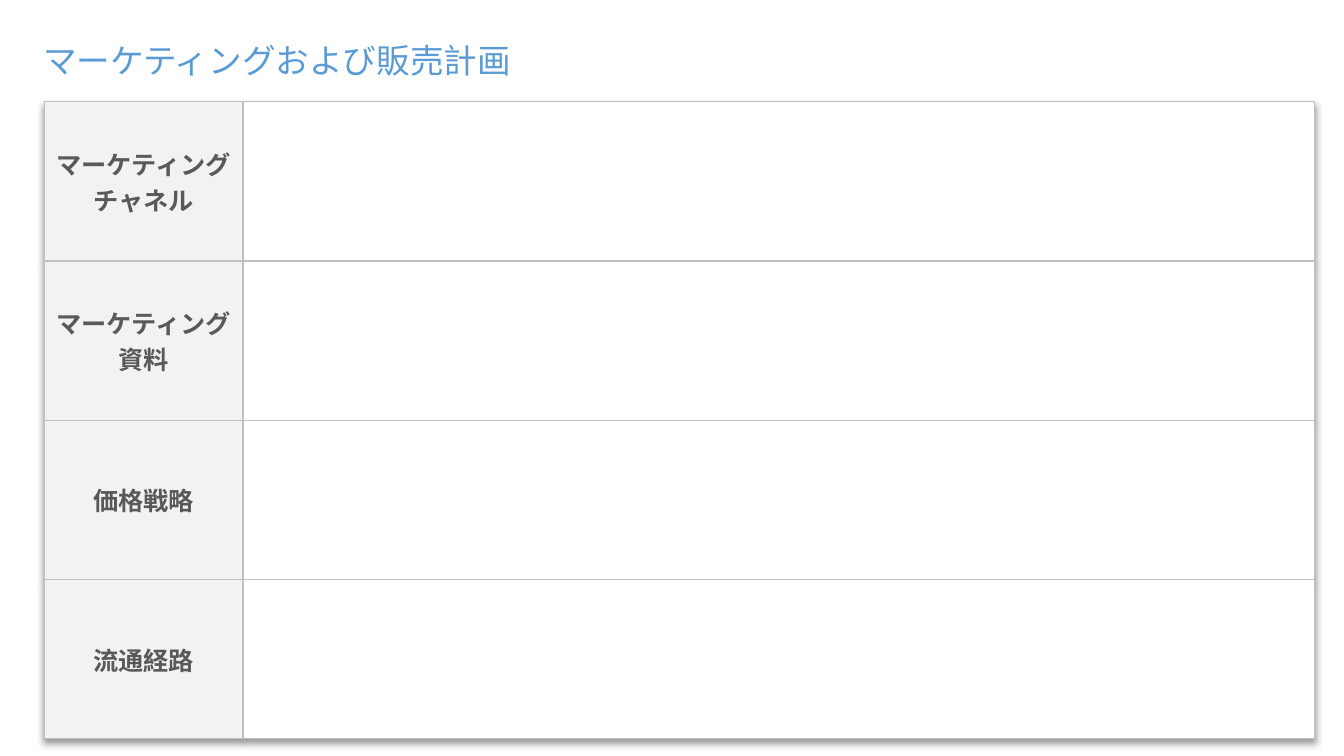
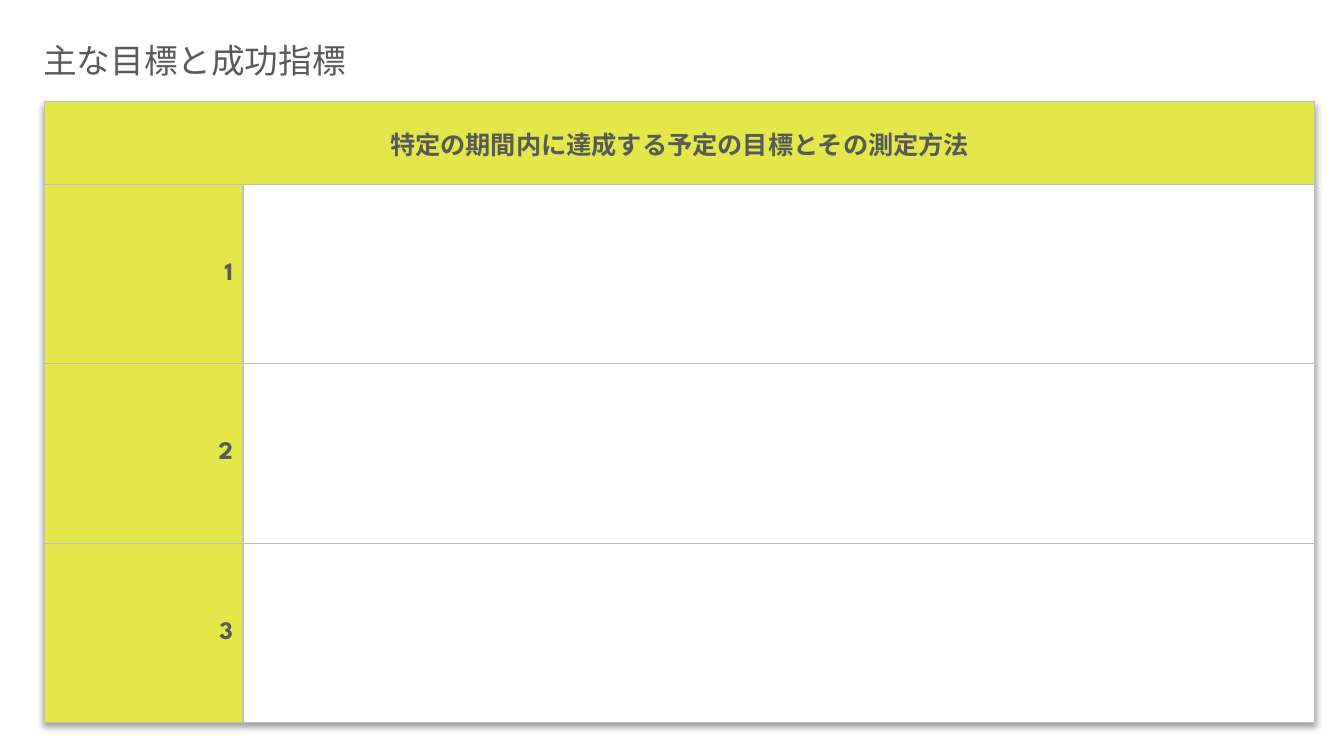
import pptx
import pptx.util
import pptx.dml.color
import pptx.enum.text
import pptx.oxml
import pptx.oxml.ns

Inches, Pt = pptx.util.Inches, pptx.util.Pt
ALIGN = pptx.enum.text.PP_ALIGN

# Content
COLOURS = {
    "blue": "5B9BD5", "text": "595959", "grid": "BFBFBF",
    "grey": "F2F2F2", "lime": "E3E749", "white": "FFFFFF", "shadow": "000000",
}
FONT = "League Spartan"
SLIDES = [
    {
        "title": "マーケティングおよび販売計画", "title_colour": "blue",
        "header": None, "label_fill": "grey", "align": ALIGN.CENTER, "row_height": 1.58,
        "labels": ["マーケティング チャネル", "マーケティング資料", "価格戦略", "流通経路"],
    },
    {
        "title": "主な目標と成功指標", "title_colour": "text",
        "header": "特定の期間内に達成する予定の目標とその測定方法",
        "label_fill": "lime", "align": ALIGN.RIGHT, "row_height": 1.78,
        "labels": ["1", "2", "3"],
    },
]

# Shared layout, in inches
SLIDE_SIZE = (13.33, 7.5)
TITLE_BOX = (0.33, 0.35, 8.08, 0.5)
TABLE_LEFT, TABLE_TOP = 0.44, 1.01
COLUMN_WIDTHS = (1.97, 10.63)
HEADER_HEIGHT = 0.82


def rgb(name):
    return pptx.dml.color.RGBColor.from_string(COLOURS[name])


def write(frame, text, size, colour, align=None, bold=False):
    para = frame.paragraphs[0]
    para.text = text
    para.alignment = align
    para.font.name = FONT
    para.font.size = Pt(size)
    para.font.bold = bold
    para.font.color.rgb = rgb(colour)


def xml(markup):
    return pptx.oxml.parse_xml(markup.replace(">", f" {pptx.oxml.ns.nsdecls('a')}>", 1))


def style_cell(cell, fill, text="", align=None):
    # Borders come before the fill in the cell's properties
    properties = cell._tc.get_or_add_tcPr()
    for side in ("lnL", "lnR", "lnT", "lnB"):
        properties.append(xml(
            f'<a:{side} w="{Pt(1)}"><a:solidFill><a:srgbClr val="{COLOURS["grid"]}"/>'
            f'</a:solidFill></a:{side}>'))
    cell.fill.solid()
    cell.fill.fore_color.rgb = rgb(fill)
    cell.vertical_anchor = pptx.enum.text.MSO_ANCHOR.MIDDLE
    if text:
        write(cell.text_frame, text, 18, "text", align, bold=True)


def add_title(page, text, colour):
    frame = page.shapes.add_textbox(*map(Inches, TITLE_BOX)).text_frame
    frame.word_wrap = True
    frame.auto_size = pptx.enum.text.MSO_AUTO_SIZE.SHAPE_TO_FIT_TEXT
    write(frame, text, 24, colour)


def add_form(page, content):
    rows = [(label, content["row_height"]) for label in content["labels"]]
    if content["header"]:
        rows.insert(0, (content["header"], HEADER_HEIGHT))
    box = (TABLE_LEFT, TABLE_TOP, sum(COLUMN_WIDTHS), sum(height for _, height in rows))
    table = page.shapes.add_table(len(rows), len(COLUMN_WIDTHS), *map(Inches, box)).table
    table.horz_banding = table.first_row = False

    # Soft shadow below the whole table
    table._tbl.tblPr.insert(0, xml(
        f'<a:effectLst><a:outerShdw blurRad="{Pt(4)}" dist="{Pt(3)}" dir="5400000" '
        f'algn="t" rotWithShape="0"><a:srgbClr val="{COLOURS["shadow"]}">'
        '<a:alpha val="40000"/></a:srgbClr></a:outerShdw></a:effectLst>'))

    for column, width in zip(table.columns, COLUMN_WIDTHS):
        column.width = Inches(width)
    for index, (text, height) in enumerate(rows):
        table.rows[index].height = Inches(height)
        label, entry = table.cell(index, 0), table.cell(index, 1)
        is_header = text == content["header"]
        style_cell(label, content["label_fill"], text,
                   ALIGN.CENTER if is_header else content["align"])
        style_cell(entry, content["label_fill"] if is_header else "white")
        if is_header:
            label.merge(entry)


def main():
    deck = pptx.Presentation()
    deck.slide_width, deck.slide_height = map(Inches, SLIDE_SIZE)
    for content in SLIDES:
        page = deck.slides.add_slide(deck.slide_layouts[6])
        add_title(page, content["title"], content["title_colour"])
        add_form(page, content)
    deck.save("out.pptx")


if __name__ == "__main__":
    main()
